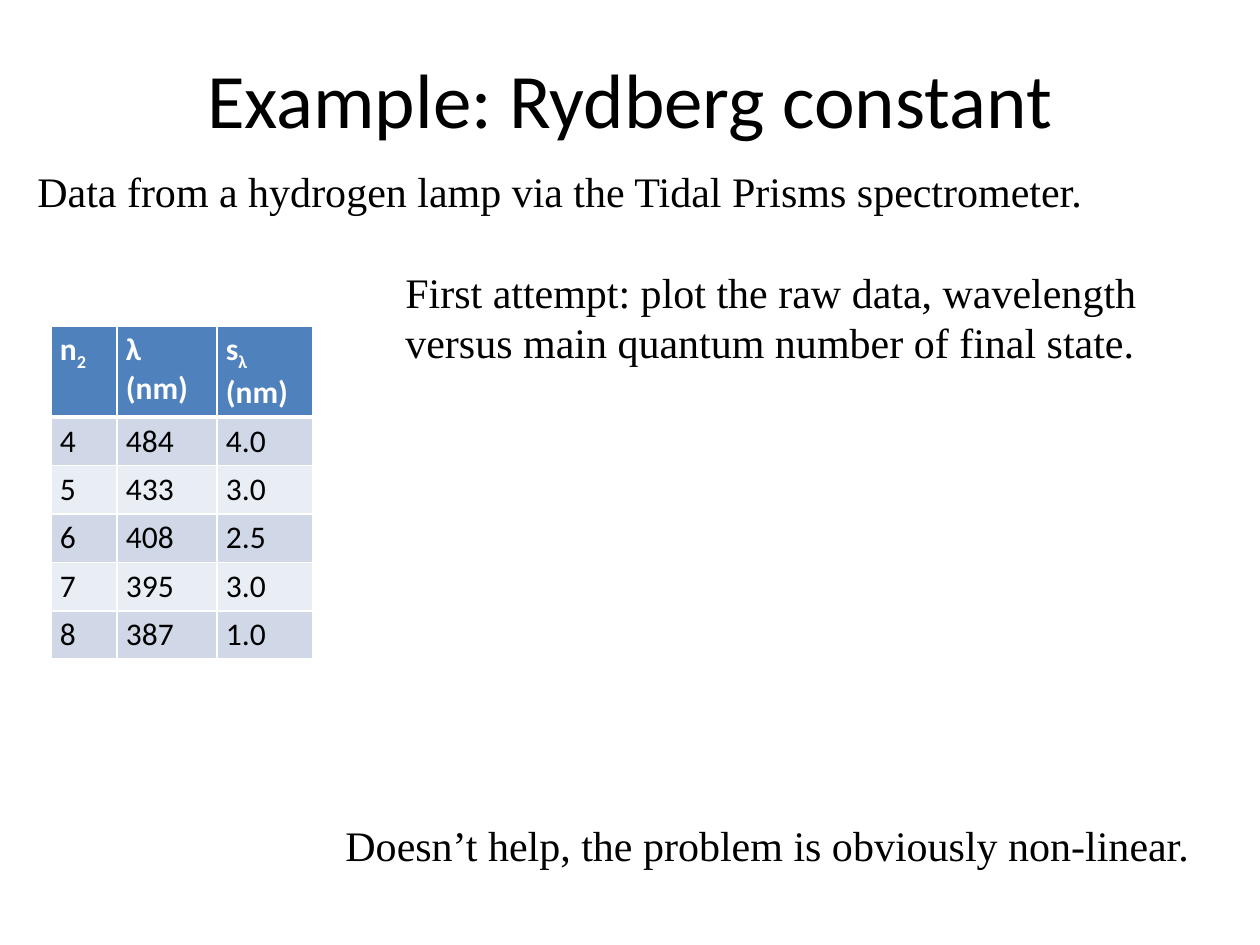
from lxml import etree
from pptx import Presentation
from pptx.dml.color import RGBColor
from pptx.enum.text import MSO_ANCHOR, MSO_AUTO_SIZE, PP_ALIGN
from pptx.oxml.ns import qn
from pptx.util import Emu, Pt

MIDDLE = MSO_ANCHOR.MIDDLE
GROW = MSO_AUTO_SIZE.SHAPE_TO_FIT_TEXT
LEFT, CENTER = PP_ALIGN.LEFT, PP_ALIGN.CENTER
PX = 914400 // 126
COLORS = {"ink": "000000", "paper": "FFFFFF", "head": "4F81BD",
          "dark": "D0D8E8", "light": "E9EDF4"}
SANS, SERIF = "Calibri", "Times New Roman"
HEADS = [[("n", 0), ("2", -25)], [("λ (nm)", 0)],
         [("s", 0), ("λ", -25), (" (nm)", 0)]]
DATA = [("4", "484", "4.0"), ("5", "433", "3.0"), ("6", "408", "2.5"),
        ("7", "395", "3.0"), ("8", "387", "1.0")]
COLS = [66, 100, 96]
ROW = 38


def px(*nums):
    return [Emu(n * PX) for n in nums]


def write(frame, text, size=24, font=SERIF, color="ink", bold=False, align=LEFT):
    para = frame.paragraphs[0]
    para.alignment = align
    parts = [(text, 0)] if isinstance(text, str) else text
    for part, base in parts:
        run = para.add_run()
        run.text = part
        run.font.size = Pt(size)
        run.font.name = font
        run.font.bold = bold
        run.font.color.rgb = RGBColor.from_string(COLORS[color])
        if base:
            run.font._element.set("baseline", str(base * 1000))


def add_title(slide, text, *box):
    title = slide.shapes.title
    title.left, title.top, title.width, title.height = px(*box)
    title.text_frame.vertical_anchor = MIDDLE
    write(title.text_frame, text, size=44, font=SANS, align=CENTER)


def add_note(slide, text, *box, wrap=True):
    frame = slide.shapes.add_textbox(*px(*box)).text_frame
    frame.word_wrap = wrap
    frame.auto_size = GROW
    write(frame, text)


def add_edge(cell, side, width):
    line = etree.SubElement(cell._tc.get_or_add_tcPr(), qn("a:ln" + side),
                            w=str(Pt(width)))
    fill = etree.SubElement(line, qn("a:solidFill"))
    etree.SubElement(fill, qn("a:srgbClr"), val=COLORS["paper"])


def style_cell(cell, row):
    cell.margin_left, cell.margin_right = px(9, 9)
    cell.margin_top, cell.margin_bottom = px(5, 5)
    edges = {"L": 1, "R": 1, "T": 3 if row == 1 else 1, "B": 3 if row == 0 else 1}
    for side, width in edges.items():
        add_edge(cell, side, width)
    color = "head" if row == 0 else "dark" if row % 2 else "light"
    cell.fill.solid()
    cell.fill.fore_color.rgb = RGBColor.from_string(COLORS[color])


def add_grid(slide, left, top):
    rows = [HEADS, *DATA]
    box = px(left, top, sum(COLS), ROW * len(rows))
    table = slide.shapes.add_table(len(rows), len(COLS), *box).table
    for col, width in zip(table.columns, px(*COLS)):
        col.width = width
    for r, texts in enumerate(rows):
        for c, text in enumerate(texts):
            cell = table.cell(r, c)
            style_cell(cell, r)
            write(cell.text_frame, text, size=18, font=SANS,
                  color="ink" if r else "paper", bold=r == 0)


def main():
    deck = Presentation()
    deck.slide_width, deck.slide_height = px(1260, 945)
    slide = deck.slides.add_slide(deck.slide_layouts[5])
    add_title(slide, "Example: Rydberg constant", 63, 19, 1134, 157)
    add_grid(slide, 51, 326)
    add_note(slide, "Data from a hydrogen lamp via the Tidal Prisms spectrometer.",
             25, 159, 1172, 63)
    add_note(slide, "First attempt: plot the raw data, wavelength versus main "
             "quantum number of final state.", 393, 260, 806, 115)
    add_note(slide, "Doesn’t help, the problem is obviously non-linear.",
             333, 813, 877, 63, wrap=False)
    deck.save("out.pptx")


if __name__ == "__main__":
    main()
